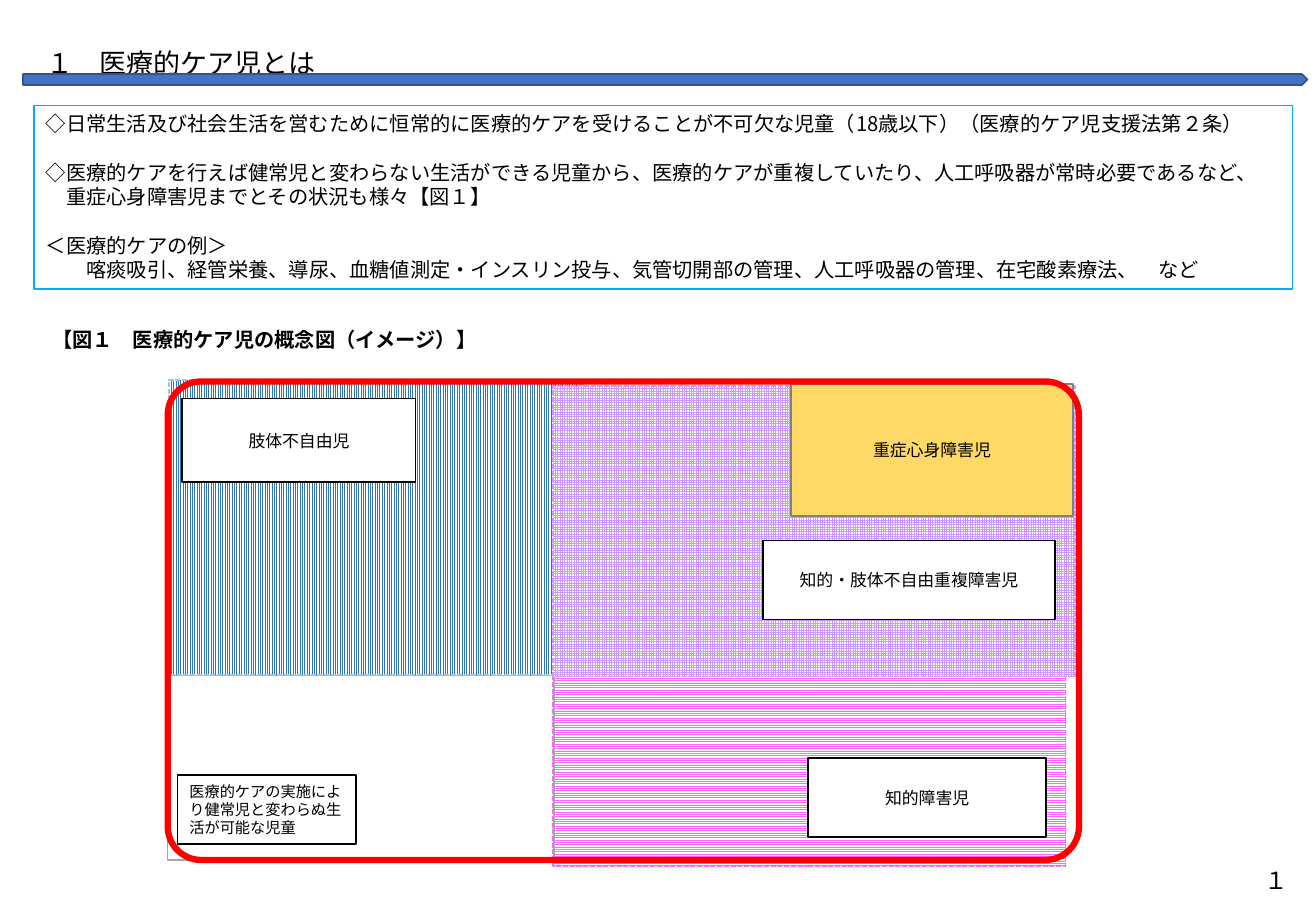
from pptx import Presentation
from pptx.dml.color import RGBColor
from pptx.enum.dml import MSO_LINE, MSO_PATTERN
from pptx.enum.lang import MSO_LANGUAGE_ID as LANG
from pptx.enum.shapes import MSO_SHAPE as SHAPE
from pptx.enum.text import MSO_ANCHOR, PP_ALIGN
from pptx.oxml.ns import qn
from pptx.util import Inches, Pt

WIDTH, HEIGHT = Inches(10.83), Inches(7.5)
FONT = "Noto Sans CJK JP"
LINE_RATIO = 1.2

BLACK = RGBColor(0x00, 0x00, 0x00)
WHITE = RGBColor(0xFF, 0xFF, 0xFF)
RED = RGBColor(0xFF, 0x00, 0x00)
SKY = RGBColor(0x00, 0xB0, 0xF0)
ARROW_BLUE = RGBColor(0x44, 0x72, 0xC4)
ARROW_EDGE = RGBColor(0x32, 0x54, 0x91)
STRIPE_BLUE = RGBColor(0x2E, 0x75, 0xB6)
PALE_BLUE = RGBColor(0x9D, 0xC3, 0xE6)
PINK = RGBColor(0xFF, 0x66, 0xFF)
PURPLE = RGBColor(0xCC, 0x99, 0xFF)
YELLOW = RGBColor(0xFF, 0xD9, 0x66)
GRAY = RGBColor(0x80, 0x80, 0x80)
LIGHT_GRAY = RGBColor(0xA6, 0xA6, 0xA6)

# Definition lines: text, indent in characters, blank line before
DEFINITION = [
    ("◇日常生活及び社会生活を営むために恒常的に医療的ケアを受けることが不可欠な児童（18歳以下）（医療的ケア児支援法第２条）", 0, False),
    ("◇医療的ケアを行えば健常児と変わらない生活ができる児童から、医療的ケアが重複していたり、人工呼吸器が常時必要であるなど、", 0, True),
    ("重症心身障害児までとその状況も様々【図１】", 1, False),
    ("＜医療的ケアの例＞", 0, True),
    ("喀痰吸引、経管栄養、導尿、血糖値測定・インスリン投与、気管切開部の管理、人工呼吸器の管理、在宅酸素療法、　など", 2, False),
]

# Areas of the diagram: place, pattern, pattern colour, edge colour
AREAS = [
    ((42.01, 68.8, 38.97, 26.27), MSO_PATTERN.LIGHT_HORIZONTAL, PINK, PINK),
    ((12.74, 74.13, 29.36, 20.27), None, None, LIGHT_GRAY),
    ((12.83, 41.73, 31.49, 32.4), MSO_PATTERN.LIGHT_VERTICAL, STRIPE_BLUE, PALE_BLUE),
    ((42.01, 42.4, 39.7, 31.87), MSO_PATTERN.SMALL_GRID, PURPLE, PURPLE),
]

# Labels of the diagram: place, text, size, alignment, fill, edge colour
LABELS = [
    ((13.48, 85.07, 13.57, 7.6), "医療的ケアの実施により健常児と変わらぬ生活が可能な児童",
     9, PP_ALIGN.LEFT, None, BLACK),
    ((60.11, 42.13, 21.42, 14.53), "重症心身障害児", 10, PP_ALIGN.CENTER, YELLOW, GRAY),
    ((13.85, 43.73, 17.73, 9.2), "肢体不自由児", 10, PP_ALIGN.CENTER, WHITE, BLACK),
    ((61.4, 83.2, 18.1, 8.67), "知的障害児", 10, PP_ALIGN.CENTER, WHITE, BLACK),
    ((57.99, 59.33, 22.16, 8.67), "知的・肢体不自由重複障害児", 10, PP_ALIGN.CENTER, WHITE, BLACK),
]


def place(x, y, w, h):
    """Turn percentages of the slide's size into lengths."""
    return [round(share * side / 100)
            for share, side in zip((x, y, w, h), (WIDTH, HEIGHT) * 2)]


def format_paragraph(p, size, bold=False, align=PP_ALIGN.LEFT):
    p.alignment = align
    p.line_spacing = Pt(size * LINE_RATIO)
    for r in p.runs:
        font = r.font
        font.name, font.size, font.bold = FONT, Pt(size), bold
        font.color.rgb = BLACK
        font.language_id = LANG.JAPANESE
        ea = r._r.get_or_add_rPr().makeelement(qn("a:ea"), {"typeface": FONT})
        r._r.rPr.find(qn("a:latin")).addnext(ea)


def add_text(slide, area, text, size, bold=False):
    tf = slide.shapes.add_textbox(*place(*area)).text_frame
    tf.word_wrap = True
    tf.text = text
    format_paragraph(tf.paragraphs[0], size, bold)


def add_box(slide, area, edge, fill=None, width=1, kind=SHAPE.RECTANGLE):
    sp = slide.shapes.add_shape(kind, *place(*area))
    sp.shadow.inherit = False
    if fill is None:
        sp.fill.background()
    else:
        sp.fill.solid()
        sp.fill.fore_color.rgb = fill
    sp.line.color.rgb = edge
    sp.line.width = Pt(width)
    return sp


def add_area(slide, area, pattern, color, edge):
    sp = add_box(slide, area, edge)
    if pattern is not None:
        sp.fill.patterned()
        sp.fill.pattern = pattern
        sp.fill.fore_color.rgb = color
        sp.fill.back_color.rgb = WHITE
        sp.line.dash_style = MSO_LINE.SQUARE_DOT


def add_label(slide, area, text, size, align, fill, edge):
    tf = add_box(slide, area, edge, fill).text_frame
    tf.word_wrap = True
    tf.vertical_anchor = MSO_ANCHOR.MIDDLE
    tf.text = text
    format_paragraph(tf.paragraphs[0], size, align=align)


def add_definition(slide, area, lines, size):
    tf = add_box(slide, area, SKY, width=0.75).text_frame
    tf.word_wrap = True
    tf.vertical_anchor = MSO_ANCHOR.TOP
    for i, (text, indent, gap) in enumerate(lines):
        p = tf.add_paragraph() if i else tf.paragraphs[0]
        p.text = text
        format_paragraph(p, size)
        p._p.get_or_add_pPr().set("marL", str(Pt(size * indent)))
        if gap:
            p.space_before = Pt(size * LINE_RATIO)


def main():
    prs = Presentation()
    prs.slide_width, prs.slide_height = WIDTH, HEIGHT
    slide = prs.slides.add_slide(prs.slide_layouts[6])

    # Title and caption
    add_text(slide, (2.59, 4.4, 56.51, 4.93), "１　医療的ケア児とは", 16)
    add_text(slide, (3.05, 35.33, 56.79, 4), "【図１　医療的ケア児の概念図（イメージ）】", 12, bold=True)

    # Concept diagram
    for area in AREAS:
        add_area(slide, *area)
    for label in LABELS:
        add_label(slide, *label)
    frame = add_box(slide, (12.74, 41.87, 69.25, 52.53), RED, width=3.75,
                    kind=SHAPE.ROUNDED_RECTANGLE)
    frame.adjustments[0] = 0.07

    # Definition, title bar and page number
    add_definition(slide, (2.59, 11.6, 95.66, 20.13), DEFINITION, 12)
    add_box(slide, (1.75, 8.13, 97.6, 1.2), ARROW_EDGE, ARROW_BLUE, kind=SHAPE.PENTAGON)
    add_text(slide, (95.2, 94.4, 4.16, 4.53), "１", 14)

    prs.save("out.pptx")


if __name__ == "__main__":
    main()
